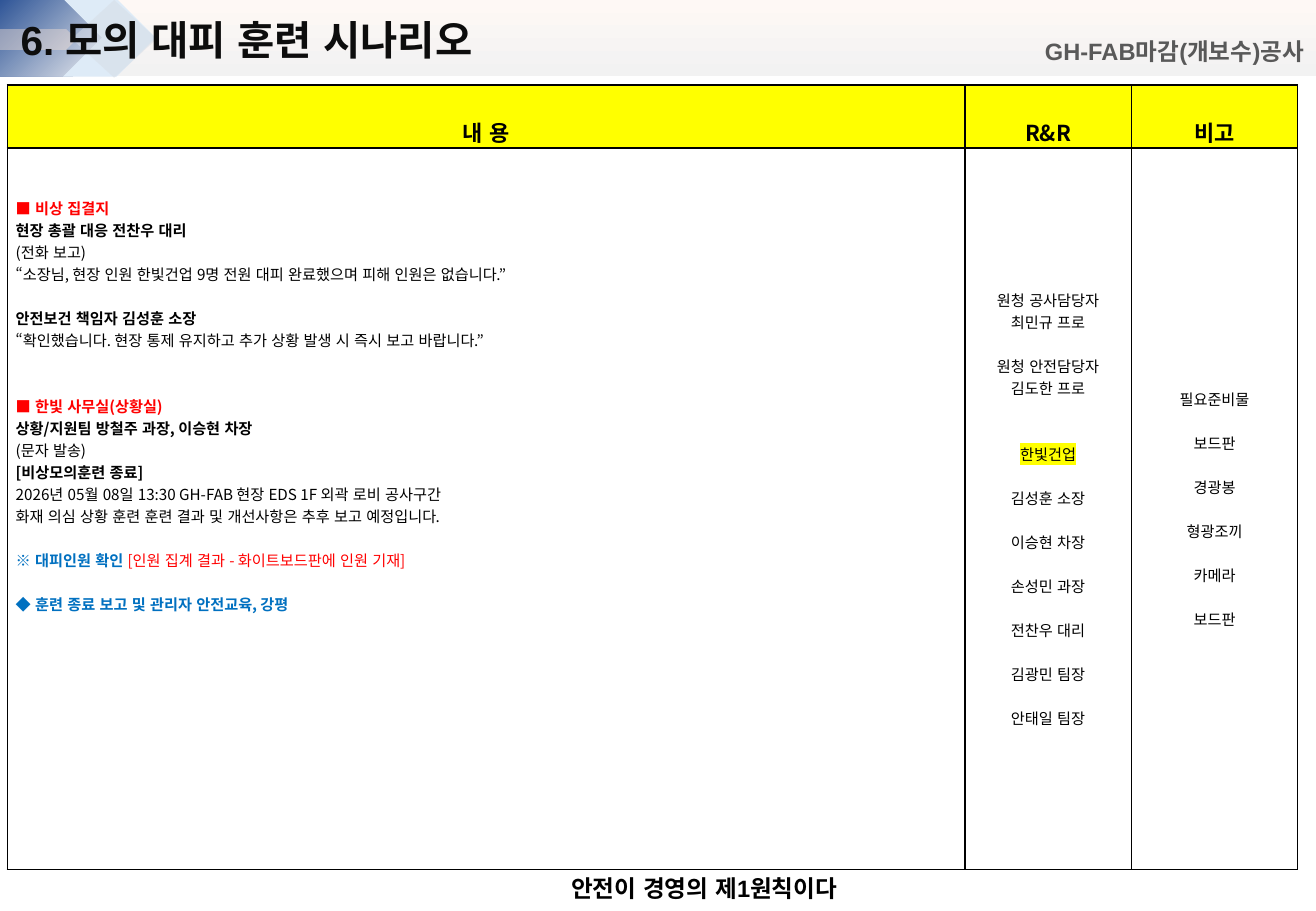
"""Build the evacuation drill scenario slide."""
from dataclasses import dataclass

from lxml import etree
from pptx import Presentation
from pptx.dml.color import RGBColor
from pptx.enum.shapes import MSO_SHAPE
from pptx.enum.text import MSO_ANCHOR, PP_ALIGN
from pptx.oxml.ns import qn
from pptx.util import Inches, Pt

LEFT, CENTER, RIGHT = PP_ALIGN.LEFT, PP_ALIGN.CENTER, PP_ALIGN.RIGHT
TOP, MIDDLE, BOTTOM = MSO_ANCHOR.TOP, MSO_ANCHOR.MIDDLE, MSO_ANCHOR.BOTTOM
RECTANGLE, PENTAGON = MSO_SHAPE.RECTANGLE, MSO_SHAPE.PENTAGON
CHEVRON, DIAMOND = MSO_SHAPE.CHEVRON, MSO_SHAPE.DIAMOND


@dataclass(frozen=True)
class Theme:
    latin: str = "Arial"
    korean: str = "Noto Sans CJK KR"
    title_size: float = 24
    label_size: float = 14
    head_size: float = 13
    body_size: float = 9
    blank_line: float = 13
    black: str = "000000"
    white: str = "FFFFFF"
    yellow: str = "FFFF00"
    red: str = "FF0000"
    blue: str = "0070C0"
    ink: str = "0D0D0D"
    gray: str = "595959"
    band: tuple = ("FEF8F5", "F2F2F2")
    glow: tuple = ("F2F2F2", "2F5597")
    pale_blue: str = "DEEBF7"
    slate: str = "D6DCE5"
    peach: str = "FBE5D6"


THEME = Theme()
STYLES = {
    "plain": (THEME.black, False),
    "bold": (THEME.black, True),
    "alert": (THEME.red, True),
    "note": (THEME.red, False),
    "info": (THEME.blue, True),
    "marked": (THEME.black, False),
    "title": (THEME.ink, True),
    "site": (THEME.gray, True),
}

TITLE = "6. 모의 대피 훈련 시나리오"
SITE = "GH-FAB마감(개보수)공사"
MOTTO = "안전이 경영의 제1원칙이다"
HEADERS = ("내 용", "R&R", "비고")

SCENARIO = [
    (0, [("■ 비상 집결지", "alert")]),
    (0, [("현장 총괄 대응 전찬우 대리", "bold")]),
    (0, [("(전화 보고)", "plain")]),
    (0, [("“소장님, 현장 인원 한빛건업 9명 전원 대피 완료했으며 피해 인원은 없습니다.”", "plain")]),
    (1, [("안전보건 책임자 김성훈 소장", "bold")]),
    (0, [("“확인했습니다. 현장 통제 유지하고 추가 상황 발생 시 즉시 보고 바랍니다.”", "plain")]),
    (2, [("■ 한빛 사무실(상황실)", "alert")]),
    (0, [("상황/지원팀 방철주 과장, 이승현 차장", "bold")]),
    (0, [("(문자 발송)", "plain")]),
    (0, [("[비상모의훈련 종료]", "bold")]),
    (0, [("2026년 05월 08일 13:30 GH-FAB 현장 EDS 1F 외곽 로비 공사구간", "plain")]),
    (0, [("화재 의심 상황 훈련 훈련 결과 및 개선사항은 추후 보고 예정입니다.", "plain")]),
    (1, [("※ 대피인원 확인 ", "info"), ("[인원 집계 결과 - 화이트보드판에 인원 기재]", "note")]),
    (1, [("◆ 훈련 종료 보고 및 관리자 안전교육, 강평", "info")]),
]
MEMBERS = ("김성훈 소장", "이승현 차장", "손성민 과장", "전찬우 대리", "김광민 팀장", "안태일 팀장")
ROLES = [
    (0, [("원청 공사담당자", "plain")]),
    (0, [("최민규 프로", "plain")]),
    (1, [("원청 안전담당자", "plain")]),
    (0, [("김도한 프로", "plain")]),
    (2, [("한빛건업", "marked")]),
] + [(1, [(name, "plain")]) for name in MEMBERS]
SUPPLIES = [
    (int(index > 0), [(item, "plain")])
    for index, item in enumerate(("필요준비물", "보드판", "경광봉", "형광조끼", "카메라", "보드판"))
]

SLIDE_WIDTH, SLIDE_HEIGHT = 10.83, 7.5
BAND_HEIGHT = 0.63
COLUMNS, ROWS = (7.88, 1.37, 1.37), (0.52, 5.94)
TABLE_LEFT, TABLE_TOP = 0.06, 0.7
INSET_X, INSET_Y, LEAD_IN = 0.07, 0.04, 0.36

DECORATION = [
    (PENTAGON, (0, 0, 0.91, BAND_HEIGHT), THEME.glow, None),
    (CHEVRON, (0.52, -0.01, 0.76, 0.64), THEME.pale_blue, None),
    (DIAMOND, (0.59, 0, 0.7, 0.64), THEME.slate, 51),
    (PENTAGON, (0, 0.24, 0.63, 0.17), THEME.peach, 41),
]


def add_node(parent, tag, **attributes):
    return etree.SubElement(parent, qn(tag), attributes)


def set_font(font, style, size, latin):
    color, bold = STYLES[style]
    font.size, font.bold, font.name = Pt(size), bold, latin
    font.color.rgb = RGBColor.from_string(color)
    add_node(font._rPr, "a:ea", typeface=THEME.korean)
    font._rPr.set("lang", "ko-KR")
    font._rPr.set("kern", "0")


def write(frame, lines, size, latin, align):
    for index, (gap, spans) in enumerate(lines):
        para = frame.paragraphs[0] if index == 0 else frame.add_paragraph()
        para.alignment = align
        para.space_before = Pt(gap * THEME.blank_line)
        for text, style in spans:
            span = para.add_run()
            span.text = text
            span._r.get_or_add_rPr().set("lang", "ko-KR")
            if len(spans) > 1:
                set_font(span.font, style, size, latin)
            if style == "marked":
                mark = add_node(span._r.get_or_add_rPr(), "a:highlight")
                add_node(mark, "a:srgbClr", val=THEME.yellow)
        if len(spans) == 1:
            set_font(para.font, spans[0][1], size, latin)


def label(box, area, text, style, size, align, wrap=True):
    box.left, box.top, box.width, box.height = map(Inches, area)
    frame = box.text_frame
    frame.word_wrap, frame.vertical_anchor = wrap, MIDDLE
    write(frame, [(0, [(text, style)])], size, THEME.latin, align)


def add_plate(page, kind, area, fill, opacity=None):
    plate = page.shapes.add_shape(kind, *map(Inches, area))
    plate.shadow.inherit = False
    plate.line.fill.background()
    if isinstance(fill, tuple):
        plate.fill.gradient()
        plate.fill.gradient_angle = 270
        for stop, color in zip(plate.fill.gradient_stops, fill):
            stop.color.rgb = RGBColor.from_string(color)
    else:
        plate.fill.solid()
        plate.fill.fore_color.rgb = RGBColor.from_string(fill)
    if opacity:
        color = plate._element.spPr.find(".//" + qn("a:srgbClr"))
        add_node(color, "a:alpha", val=str(opacity * 1000))
    return plate


def make_radial(plate):
    gradient = plate._element.spPr.find(qn("a:gradFill"))
    linear = gradient.find(qn("a:lin"))
    radial = etree.Element(qn("a:path"), {"path": "circle"})
    add_node(radial, "a:fillToRect", l="100000", t="100000")
    gradient.replace(linear, radial)


def format_cell(cell, fill, anchor, top=INSET_Y, bottom=INSET_Y):
    cell.margin_left = cell.margin_right = Inches(INSET_X)
    cell.margin_top, cell.margin_bottom = Inches(top), Inches(bottom)
    cell.vertical_anchor = anchor
    for side in ("a:lnL", "a:lnR", "a:lnT", "a:lnB"):
        border = add_node(cell._tc.get_or_add_tcPr(), side, w=str(Pt(1)))
        add_node(add_node(border, "a:solidFill"), "a:srgbClr", val=THEME.black)
    cell.fill.solid()
    cell.fill.fore_color.rgb = RGBColor.from_string(fill)


def add_scenario_table(page):
    area = (TABLE_LEFT, TABLE_TOP, sum(COLUMNS), sum(ROWS))
    table = page.shapes.add_table(len(ROWS), len(COLUMNS), *map(Inches, area)).table
    table.first_row = table.horz_banding = False
    for row, height in zip(table.rows, ROWS):
        row.height = Inches(height)
    bodies = (
        (SCENARIO, LEFT, TOP, INSET_Y + LEAD_IN),
        (ROLES, CENTER, MIDDLE, INSET_Y),
        (SUPPLIES, CENTER, MIDDLE, INSET_Y),
    )
    for index, (header, (lines, align, anchor, top)) in enumerate(zip(HEADERS, bodies)):
        table.columns[index].width = Inches(COLUMNS[index])
        head, body = table.cell(0, index), table.cell(1, index)
        format_cell(head, THEME.yellow, BOTTOM, bottom=0)
        format_cell(body, THEME.white, anchor, top)
        write(head.text_frame, [(0, [(header, "bold")])], THEME.head_size, THEME.korean, CENTER)
        write(body.text_frame, lines, THEME.body_size, THEME.korean, align)


def main():
    deck = Presentation()
    deck.slide_width, deck.slide_height = Inches(SLIDE_WIDTH), Inches(SLIDE_HEIGHT)
    page = deck.slides.add_slide(deck.slide_layouts[5])
    add_plate(page, RECTANGLE, (0, 0, SLIDE_WIDTH, BAND_HEIGHT), THEME.band)
    plates = [add_plate(page, *item) for item in DECORATION]
    make_radial(plates[0])
    add_scenario_table(page)
    title = page.shapes.title
    page.shapes._spTree.append(title._element)
    label(title, (0.07, 0.07, 7.31, 0.5), TITLE, "title", THEME.title_size, LEFT)
    for area, text, style, align, wrap in (
        ((8.17, 0.25, 2.66, 0.34), SITE, "site", RIGHT, True),
        ((4.38, 7.14, 2.61, 0.34), MOTTO, "bold", RIGHT, False),
    ):
        box = page.shapes.add_textbox(0, 0, 0, 0)
        label(box, area, text, style, THEME.label_size, align, wrap)
    deck.save("out.pptx")


if __name__ == "__main__":
    main()
